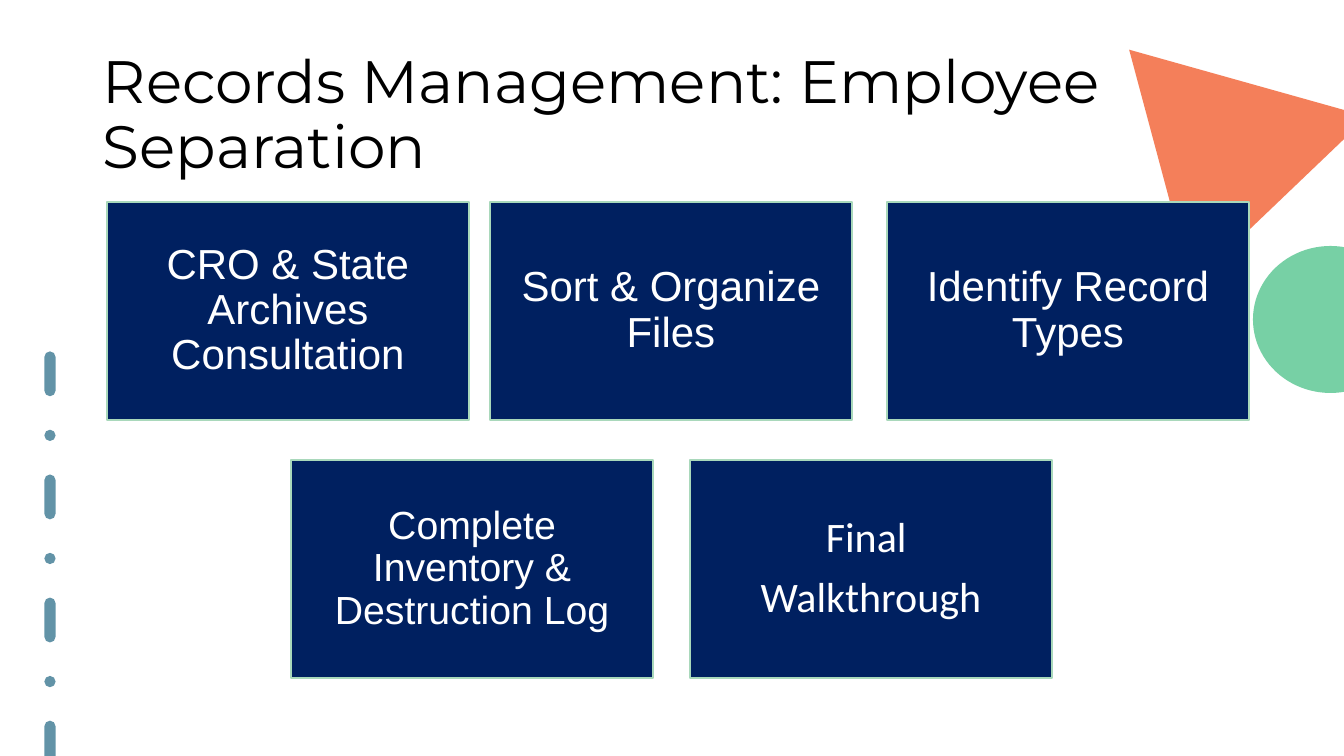
from lxml import etree
from pptx import Presentation, util as u
from pptx.dml.color import RGBColor
from pptx.enum import dml, shapes, text
from pptx.oxml import ns

PX = 914400 / 100.8
CARD_SIZE = (362, 218)
CARDS = [
    (107, 202, ["CRO & State Archives Consultation"], 30, "Arial"),
    (490, 202, ["Sort & Organize Files"], 30, "Arial"),
    (887, 202, ["Identify Record Types"], 30, "Arial"),
    (291, 460, ["Complete Inventory & Destruction Log"], 28, "Arial"),
    (690, 460, ["Final ", "Walkthrough"], 30, "Calibri"),
]


def px(*lengths):
    """Turn pixel lengths into EMU."""
    return [u.Emu(round(length * PX)) for length in lengths]


def paint(color_format, color, opacity=100):
    """Set a fill or line to a solid hex colour with an opacity in percent."""
    color_format.solid()
    color_format.fore_color.rgb = RGBColor.from_string(color)
    if opacity < 100:
        solid = color_format.fore_color._xFill
        alpha = etree.SubElement(solid[0], ns.qn("a:alpha"))
        alpha.set("val", str(opacity * 1000))


def add_block(slide, kind, box, color, opacity=100):
    """Add a flat filled preset shape without an outline."""
    shape = slide.shapes.add_shape(kind, *px(*box))
    shape.shadow.inherit = False
    paint(shape.fill, color, opacity)
    shape.line.fill.background()
    return shape


def write(frame, lines, size, font, color, align, space_after=0):
    """Fill a text frame with one paragraph per line."""
    frame.word_wrap = True
    for index, line in enumerate(lines):
        paragraph = frame.add_paragraph() if index else frame.paragraphs[0]
        paragraph.alignment = align
        paragraph.line_spacing = 0.9
        paragraph.space_after = u.Pt(space_after)
        run = paragraph.add_run()
        run.text = line
        run.font.size = u.Pt(size)
        run.font.name = font
        run.font.color.rgb = RGBColor.from_string(color)


def add_decoration(slide, left, top):
    """Place the triangle, the circle and the dashed line."""
    triangle = add_block(slide, shapes.MSO_SHAPE.ISOSCELES_TRIANGLE,
                         (left + 1142, top + 33, 243, 213), "F26031", 80)
    triangle.adjustments[0] = 0.52
    triangle.rotation = 75
    dashes = slide.shapes.add_connector(
        shapes.MSO_CONNECTOR.STRAIGHT,
        *px(left + 50, top + 357, left + 50, top + 757))
    paint(dashes.line.fill, "3B7892", 80)
    dashes.line.width = u.Pt(8)
    dashes.line.dash_style = dml.MSO_LINE.DASH_DOT
    properties = dashes._element.spPr
    properties.find(ns.qn("a:ln")).set("cap", "rnd")
    etree.SubElement(properties, ns.qn("a:effectLst"))
    add_block(slide, shapes.MSO_SHAPE.OVAL,
              (left + 1253, top + 246, 155, 147), "55C58F", 80)


def add_title(slide, left, top, width, height):
    """Place the slide title at the bottom of its box."""
    frame = slide.shapes.add_textbox(*px(left, top, width, height)).text_frame
    frame.vertical_anchor = text.MSO_ANCHOR.BOTTOM
    write(frame, ["Records Management: Employee Separation"], 42.7,
          "Montserrat", "000000", text.PP_ALIGN.LEFT)


def add_card(slide, left, top, width, height, lines, size, font):
    """Place one step card with centred text."""
    card = add_block(slide, shapes.MSO_SHAPE.RECTANGLE,
                     (left, top, width, height), "002060")
    paint(card.line.fill, "A9D8BB")
    card.line.width = u.Pt(1)
    frame = card.text_frame
    frame.vertical_anchor = text.MSO_ANCHOR.MIDDLE
    for side in ("left", "top", "right", "bottom"):
        setattr(frame, f"margin_{side}", px(12)[0])
    write(frame, lines, size, font, "FFFFFF", text.PP_ALIGN.CENTER,
          size * 0.35)


def main():
    """Build and save the slide."""
    presentation = Presentation()
    presentation.slide_width, presentation.slide_height = px(1344, 756)
    slide = presentation.slides.add_slide(presentation.slide_layouts[6])
    add_decoration(slide, 0, 0)
    add_title(slide, 93, 40, 1159, 146)
    for left, top, lines, size, font in CARDS:
        add_card(slide, left, top, *CARD_SIZE, lines, size, font)
    presentation.save("out.pptx")


if __name__ == "__main__":
    main()
